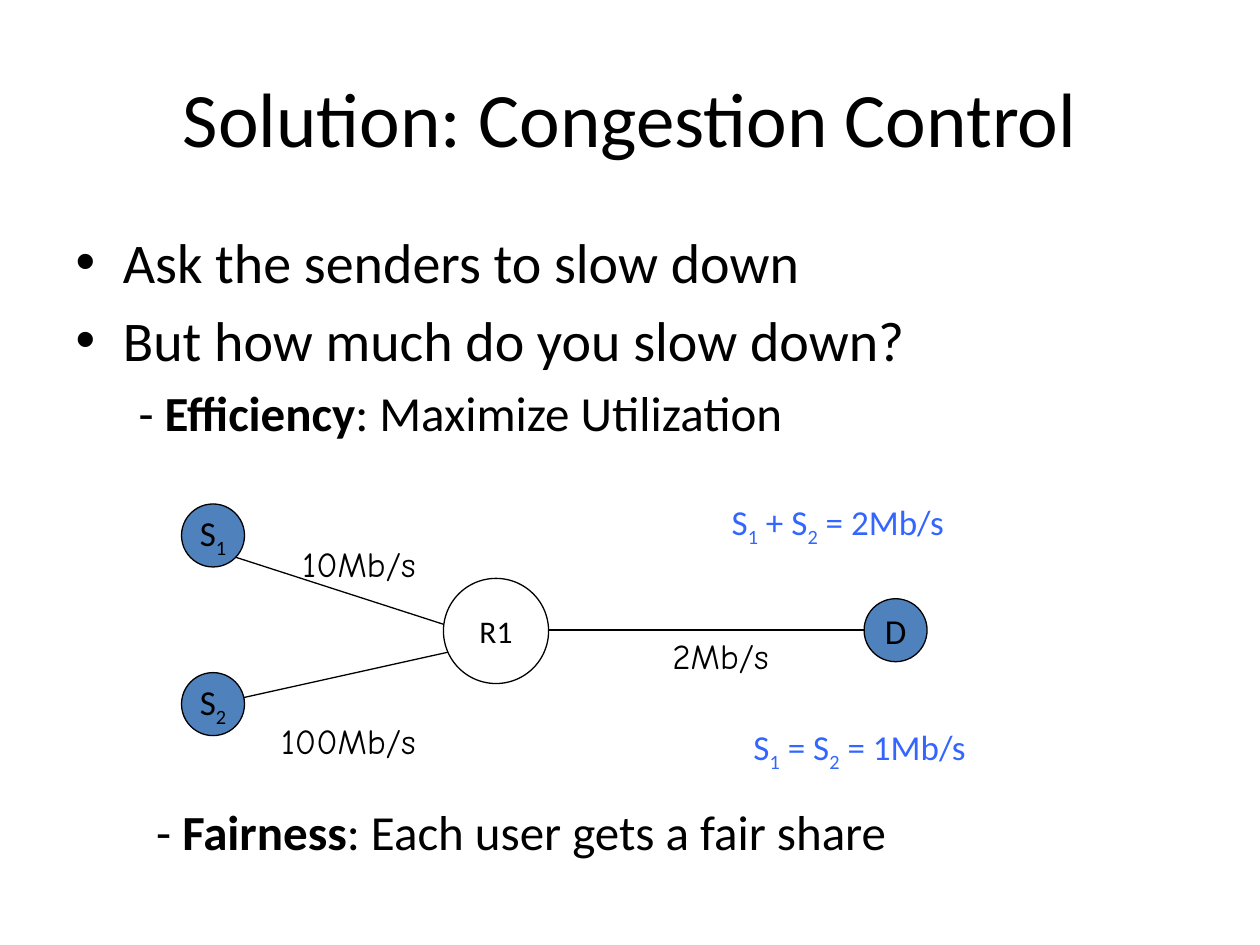
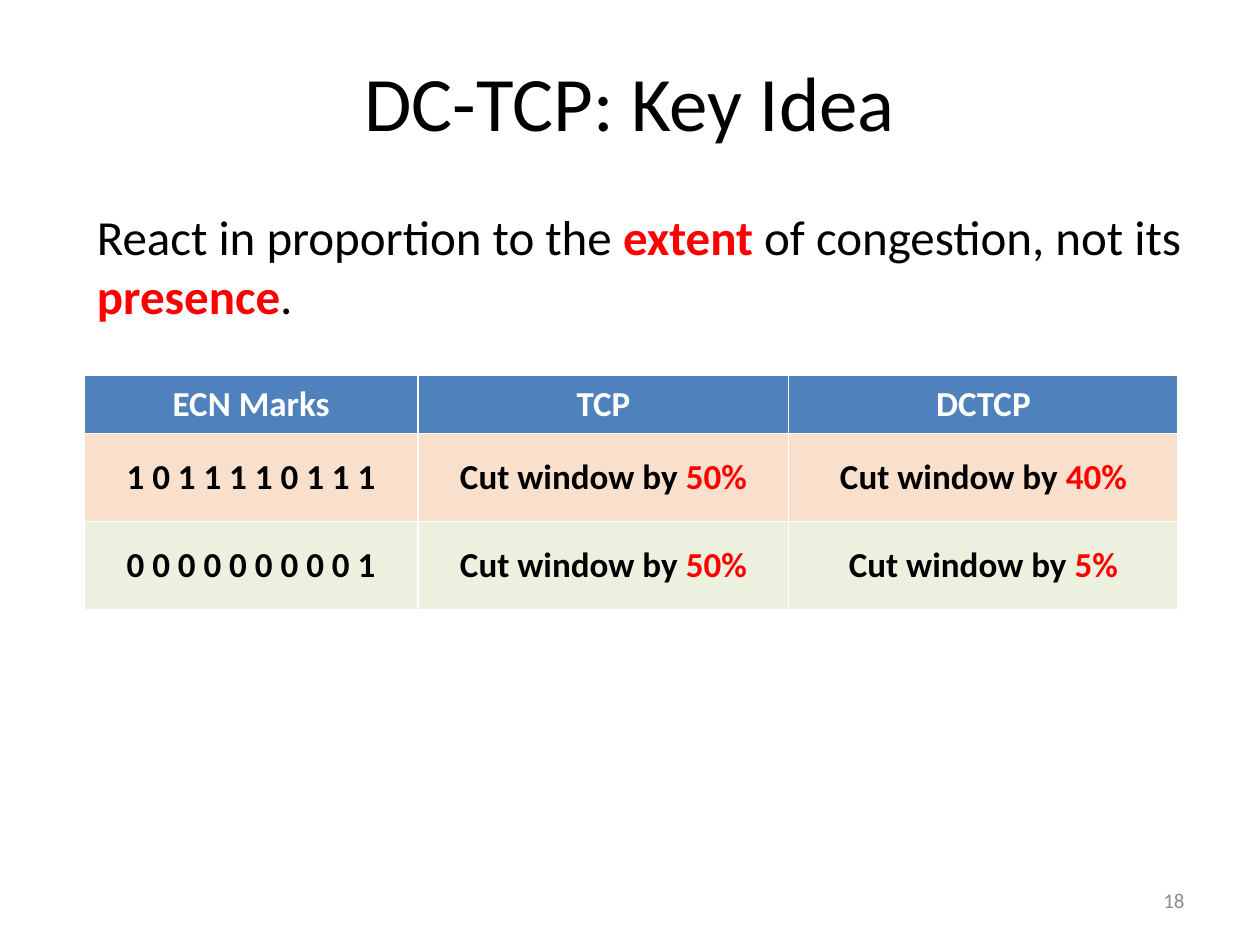
import dataclasses

import lxml.etree
import pptx
import pptx.dml.color
import pptx.enum.shapes
import pptx.enum.text
import pptx.oxml.ns
import pptx.util

Cm = pptx.util.Cm
Align = pptx.enum.text.PP_ALIGN
Anchor = pptx.enum.text.MSO_ANCHOR
qn = pptx.oxml.ns.qn


def rgb(value):
    return pptx.dml.color.RGBColor.from_string(value)


@dataclasses.dataclass(frozen=True)
class Theme:
    font: str = "Calibri"
    label_font: str = "Comic Neue"
    ink: str = "000000"
    paper: str = "FFFFFF"
    blue: str = "4F81BD"
    equation: str = "3366FF"
    alert: str = "FF0000"
    grey: str = "8C8C8C"
    peach: str = "F9E0CD"
    mint: str = "EBF1DE"
    title: int = 44
    bullet: int = 32
    lead: int = 28
    normal: int = 20
    router: int = 18
    footer: int = 12
    line: float = 0.75


THEME = Theme()
BOLD, SUB, RED = "bold", "sub", "red"
LEAD_INDENT = Cm(1.27)
LINE_HEIGHT = 1.12
NODE_SIZE = 1.27


def write(p, parts, size, color=THEME.ink, font=THEME.font, bold=False):
    """Fill a paragraph from a string or a list of strings and (text, style...) tuples."""
    for part in [parts] if isinstance(parts, str) else parts:
        text, *styles = [part] if isinstance(part, str) else part
        r = p.add_run()
        r.text = text
        r.font.size = pptx.util.Pt(size)
        r.font.name = font
        r.font.bold = bold or BOLD in styles
        r.font.color.rgb = rgb(THEME.alert if RED in styles else color)
        if SUB in styles:
            r.font._element.set("baseline", "-25000")


def remove_bullet(p, margin=0):
    pPr = p._p.get_or_add_pPr()
    pPr.set("marL", str(int(margin)))
    pPr.set("indent", "0")
    lxml.etree.SubElement(pPr, qn("a:buNone"))


def place(sp, left, top, width, height):
    sp.left, sp.top, sp.width, sp.height = map(Cm, (left, top, width, height))


def add_slide(prs, title, title_top, body_box):
    s = prs.slides.add_slide(prs.slide_layouts[1])
    sp = s.shapes.title
    place(sp, 1.27, title_top, 22.86, 3.18)
    write(sp.text_frame.paragraphs[0], title, THEME.title)
    body = s.placeholders[1]
    place(body, *body_box)
    return s, body.text_frame


def add_text(s, box, parts, size, align=Align.LEFT, wrap=True, **style):
    sp = s.shapes.add_textbox(*map(Cm, box))
    tf = sp.text_frame
    tf.word_wrap = wrap
    p = tf.paragraphs[0]
    p.alignment = align
    write(p, parts, size, **style)
    return sp


def add_link(s, x1, y1, x2, y2):
    straight = pptx.enum.shapes.MSO_CONNECTOR.STRAIGHT
    sp = s.shapes.add_connector(straight, *map(Cm, (x1, y1, x2, y2)))
    sp.line.color.rgb = rgb(THEME.ink)
    sp.line.width = pptx.util.Pt(THEME.line)
    lxml.etree.SubElement(sp._element.spPr, qn("a:effectLst"))


def add_node(s, left, top, parts, diameter=NODE_SIZE, fill=THEME.blue, size=THEME.normal):
    oval = pptx.enum.shapes.MSO_SHAPE.OVAL
    sp = s.shapes.add_shape(oval, *map(Cm, (left, top, diameter, diameter)))
    sp.shadow.inherit = False
    sp.fill.solid()
    sp.fill.fore_color.rgb = rgb(fill)
    sp.line.color.rgb = rgb(THEME.ink)
    sp.line.width = pptx.util.Pt(THEME.line)
    tf = sp.text_frame
    tf.word_wrap = False
    tf.vertical_anchor = Anchor.MIDDLE
    p = tf.paragraphs[0]
    p.alignment = Align.CENTER
    write(p, parts, size)


def add_table(s, left, top, widths, heights, rows, fills):
    box = map(Cm, (left, top, sum(widths), sum(heights)))
    table = s.shapes.add_table(len(rows), len(widths), *box).table
    for column, width in zip(table.columns, widths):
        column.width = Cm(width)
    for i, (row, height, fill) in enumerate(zip(rows, heights, fills)):
        table.rows[i].height = Cm(height)
        for j, parts in enumerate(row):
            cell = table.cell(i, j)
            cell.fill.solid()
            cell.fill.fore_color.rgb = rgb(fill)
            cell.vertical_anchor = Anchor.MIDDLE
            cell.margin_left = cell.margin_right = Cm(0.3)
            cell.margin_top = cell.margin_bottom = Cm(0.15)
            p = cell.text_frame.paragraphs[0]
            p.alignment = Align.CENTER
            color = THEME.paper if i == 0 else THEME.ink
            write(p, parts, THEME.normal, color=color, bold=True)


def add_page_number(s, number):
    sp = add_text(s, (18.21, 17.65, 5.92, 1.01), number, THEME.footer,
                  Align.RIGHT, color=THEME.grey)
    sp.text_frame.vertical_anchor = Anchor.MIDDLE


def draw_network(s):
    for ends in ((4.09, 11.02, 10.01, 12.93),
                 (4.29, 14.2, 10.01, 12.93),
                 (11.07, 12.7, 18.06, 12.7)):
        add_link(s, *ends)
    add_node(s, 3.66, 10.16, ["S", ("1", SUB)])
    add_node(s, 3.66, 13.56, ["S", ("2", SUB)])
    add_node(s, 8.94, 11.66, "R1", 2.12, THEME.paper, THEME.router)
    add_node(s, 17.42, 12.07, "D")
    for left, top, width, rate in ((5.74, 10.82, 3, "10Mb/s"),
                                   (13.18, 12.67, 2.69, "2Mb/s"),
                                   (5.31, 14.38, 3.43, "100Mb/s")):
        add_text(s, (left, top, width, LINE_HEIGHT), rate, THEME.normal,
                 Align.CENTER, wrap=False, font=THEME.label_font)


def build_congestion_control(prs):
    s, tf = add_slide(prs, "Solution: Congestion Control", 0.76,
                      (1.27, 4.45, 22.86, 12.01))
    write(tf.paragraphs[0], "Ask the senders to slow down", THEME.bullet)
    write(tf.add_paragraph(), "But how much do you slow down?", THEME.bullet)
    p = tf.add_paragraph()
    p.level = 1
    remove_bullet(p, LEAD_INDENT)
    write(p, ["- ", ("Efficiency", BOLD), ": Maximize Utilization"], THEME.lead)
    draw_network(s)
    sp = add_text(s, (1.63, 16.03, 17.53, 1.5),
                  ["- ", ("Fairness", BOLD), ": Each user gets a fair share"], THEME.lead)
    remove_bullet(sp.text_frame.paragraphs[0], LEAD_INDENT)
    for left, top, sign, total in ((14.5, 9.96, "+", "2Mb/s"),
                                   (14.94, 14.5, "=", "1Mb/s")):
        add_text(s, (left, top, 5.84, LINE_HEIGHT),
                 ["S", ("1", SUB), f" {sign} S", ("2", SUB), f" = {total}"],
                 THEME.normal, color=THEME.equation)


def build_key_idea(prs):
    s, tf = add_slide(prs, "DC-TCP: Key Idea", 0.43, (1.7, 4.04, 23.7, 8.66))
    p = tf.paragraphs[0]
    remove_bullet(p)
    write(p, ["React in proportion to the ", ("extent", BOLD, RED),
              " of congestion, not its ", ("presence", BOLD, RED), "."], THEME.lead)
    rows = [["ECN Marks", "TCP", "DCTCP"]]
    for marks, *cuts in (("1 0 1 1 1 1 0 1 1 1", "50%", "40%"),
                         ("0 0 0 0 0 0 0 0 0 1", "50%", "5%")):
        rows.append([marks] + [["Cut window by ", (cut, RED)] for cut in cuts])
    add_table(s, 1.7, 7.57, (6.73, 7.47, 7.85), (1.14, 1.78, 1.78), rows,
              (THEME.blue, THEME.peach, THEME.mint))
    add_page_number(s, "18")


def main():
    prs = pptx.Presentation()
    prs.slide_width, prs.slide_height = Cm(25.4), Cm(19.05)
    build_congestion_control(prs)
    build_key_idea(prs)
    prs.save("out.pptx")


if __name__ == "__main__":
    main()
